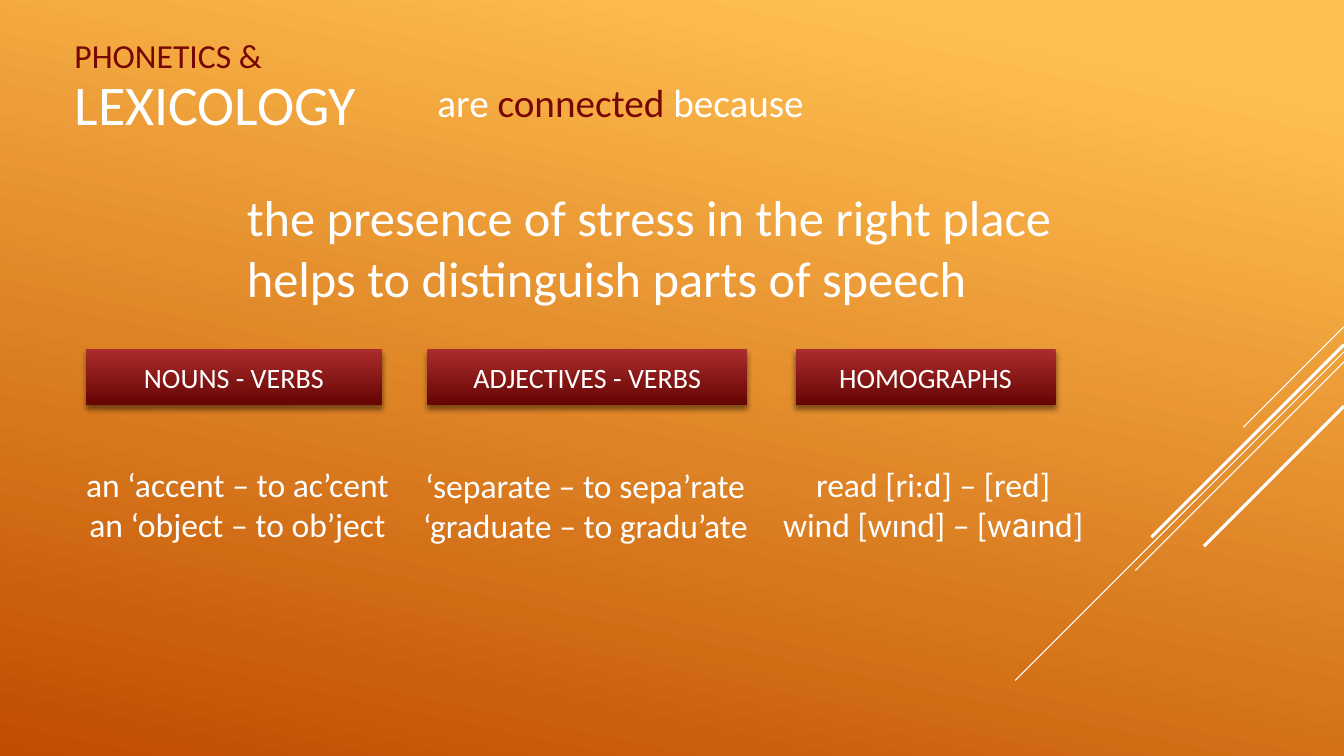
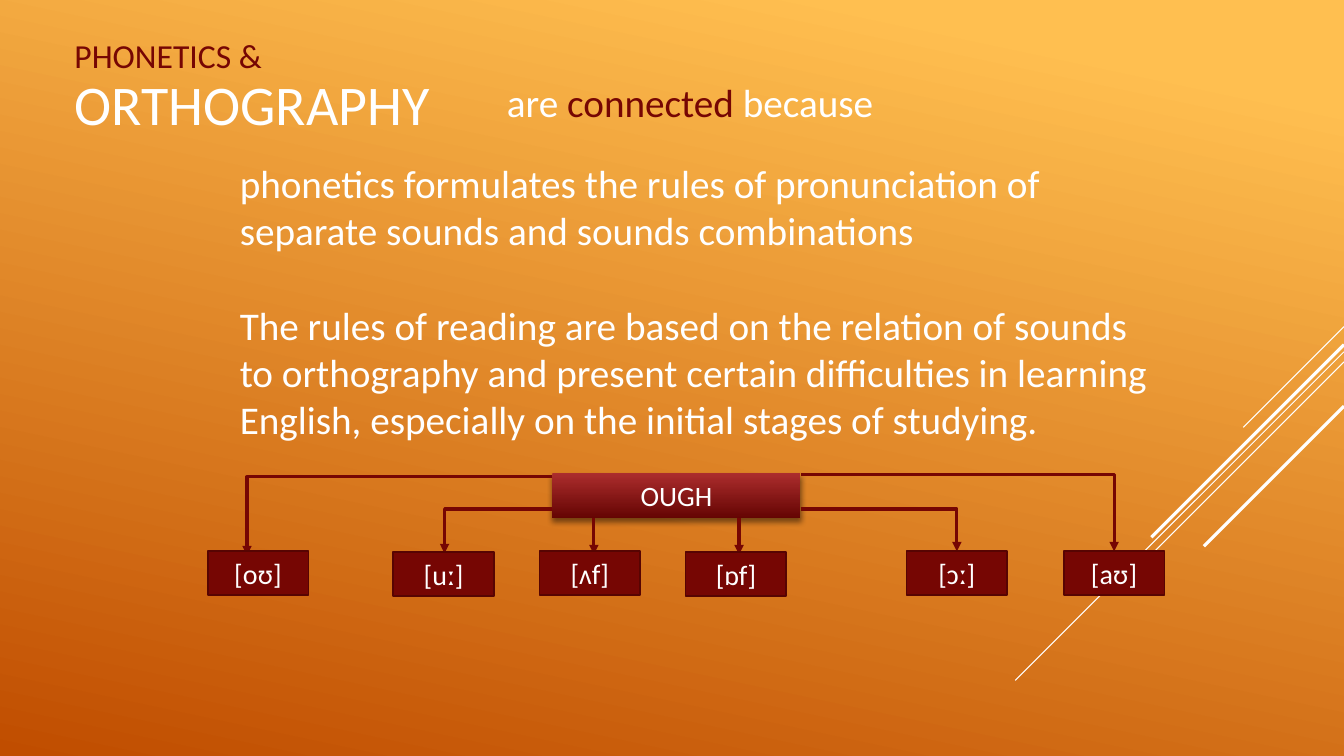
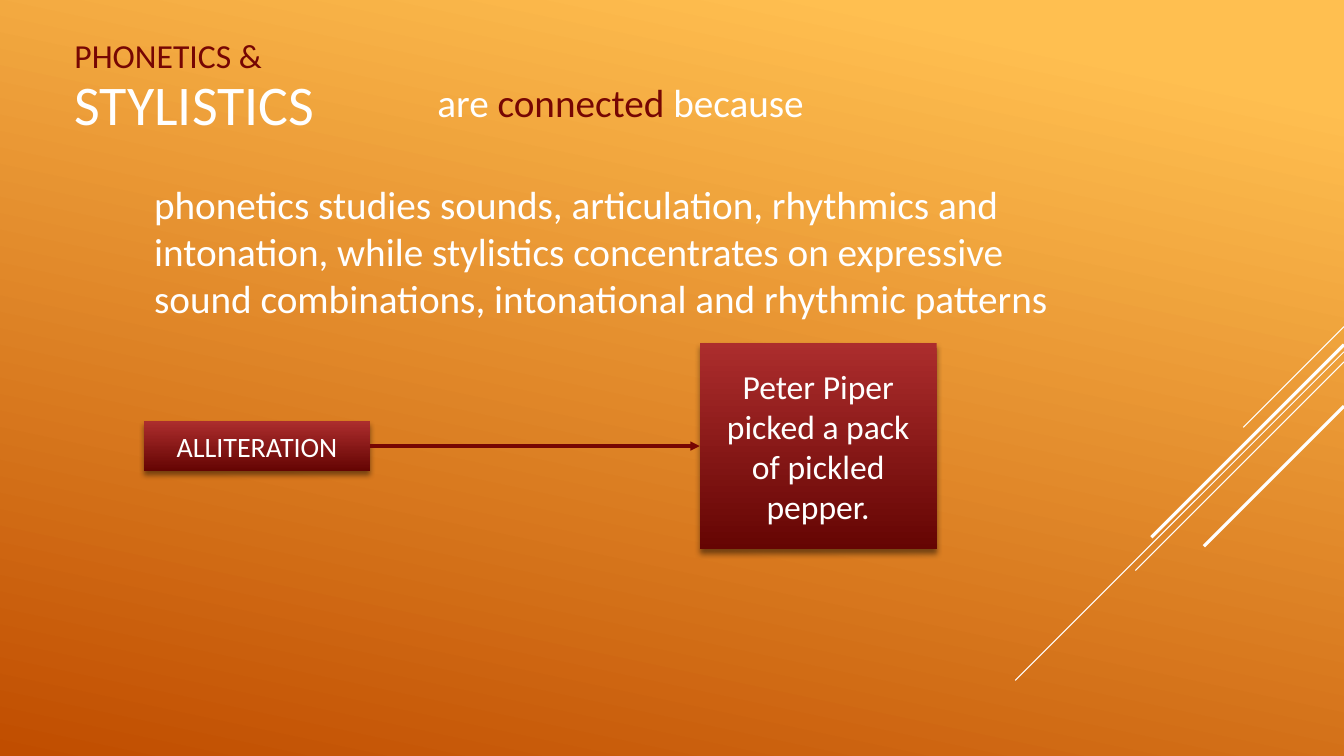
from pptx import Presentation
from pptx.dml.color import RGBColor
from pptx.enum import dml, shapes, text
from pptx.oxml import parse_xml
from pptx.oxml.ns import nsdecls, qn
from pptx.util import Inches, Pt

FONT = "Calibri"
WHITE = "FFFFFF"
MAROON = "760603"
DARK_MAROON = "570402"
BUTTON_GRADIENT = ((0, "AC2D2D"), (1, "650503"))
PAGE_GRADIENT = ((0.1, "FFBF50"), (1, "C04D00"))
LEFT, CENTER = text.PP_ALIGN.LEFT, text.PP_ALIGN.CENTER
TOP, MIDDLE = text.MSO_ANCHOR.TOP, text.MSO_ANCHOR.MIDDLE
LINE_HEIGHT = 1.22

# start x, start y, horizontal and vertical run, width in points
RAYS = (
    (13.33, 3.24, 1, 0.75),
    (13.33, 3.49, 3.26, 0.75),
    (13.33, 3.59, 2.07, 0.75),
    (13.33, 3.42, 1.91, 2.25),
    (13.33, 4.03, 1.39, 2.25),
)


def color(hex_code):
    return RGBColor.from_string(hex_code)


def fill_gradient(fill, stops, clockwise_angle):
    fill.gradient()
    fill.gradient_angle = 360 - clockwise_angle
    for stop, (position, hex_code) in zip(fill.gradient_stops, stops):
        stop.position = position
        stop.color.rgb = color(hex_code)


def write(shape, paragraphs, size, align=LEFT, anchor=TOP, gap=0):
    """Each paragraph is a string or a list of (text, colour, font) runs."""
    frame = shape.text_frame
    frame.word_wrap = True
    frame.auto_size = text.MSO_AUTO_SIZE.NONE
    frame.vertical_anchor = anchor
    for index, runs in enumerate(paragraphs):
        paragraph = frame.add_paragraph() if index else frame.paragraphs[0]
        paragraph.alignment = align
        if index and gap:
            paragraph.space_before = Pt(gap)
        if isinstance(runs, str):
            runs = [(runs, WHITE, FONT)]
        for words, hex_code, font in runs:
            run = paragraph.add_run()
            run.text = words
            run.font.size = Pt(size)
            run.font.name = font
            run.font.color.rgb = color(hex_code)


def add_text(slide, box, paragraphs, size, **style):
    shape = slide.shapes.add_textbox(*map(Inches, box))
    write(shape, paragraphs, size, **style)


def add_rectangle(slide, box, label, size):
    shape = slide.shapes.add_shape(shapes.MSO_SHAPE.RECTANGLE, *map(Inches, box))
    shape.shadow.inherit = False
    write(shape, [label], size, align=CENTER, anchor=MIDDLE)
    return shape


def add_button(slide, box, label, size=20):
    """Gradient rectangle with a soft shadow below it."""
    shape = add_rectangle(slide, box, label, size)
    fill_gradient(shape.fill, BUTTON_GRADIENT, 90)
    shape.line.fill.background()
    shape.element.spPr.find(qn("a:effectLst")).append(parse_xml(
        f'<a:outerShdw {nsdecls("a")} blurRad="{Pt(4)}" dist="{Pt(3)}" dir="5400000" '
        'rotWithShape="0"><a:srgbClr val="000000"><a:alpha val="46000"/></a:srgbClr>'
        '</a:outerShdw>'))
    return shape


def add_sound(slide, box, label):
    shape = add_rectangle(slide, box, label, 20)
    shape.fill.solid()
    shape.fill.fore_color.rgb = color(MAROON)
    shape.line.color.rgb = color(DARK_MAROON)
    shape.line.width = Pt(1.25)


def add_line(slide, start, end, hex_code, width, kind=shapes.MSO_CONNECTOR.STRAIGHT):
    connector = slide.shapes.add_connector(kind, *map(Inches, (*start, *end)))
    connector.line.color.rgb = color(hex_code)
    connector.line.width = Pt(width)
    connector.element.spPr.append(parse_xml(f'<a:effectLst {nsdecls("a")}/>'))
    return connector


def add_arrow(slide, start, end, bent=False):
    """A bent arrow runs sideways first, then down."""
    kind = shapes.MSO_CONNECTOR.ELBOW if bent else shapes.MSO_CONNECTOR.STRAIGHT
    connector = add_line(slide, start, end, MAROON, 2.25, kind)
    properties = connector.element.spPr
    properties.find(qn("a:ln")).append(
        parse_xml(f'<a:tailEnd {nsdecls("a")} type="triangle"/>'))
    if bent:
        properties.find(qn("a:prstGeom")).set("prst", "bentConnector2")
    return connector


def decorate_master(presentation, slide):
    """Set the background and move the rays, drawn on a slide, to the master."""
    master = presentation.slide_master
    fill_gradient(master.background.fill, PAGE_GRADIENT, 102)
    for number, (x, y, run, width) in enumerate(RAYS, start=20):
        ray = add_line(slide, (x, y), (x - run, y + run), WHITE, width)
        ray.element.nvCxnSpPr.cNvPr.id = number
        master.shapes.element.append(ray.element)


def add_topic_slide(presentation, topic, connected_left):
    slide = presentation.slides.add_slide(presentation.slide_layouts[5])
    title = slide.shapes.title
    title.left, title.top, title.width, title.height = map(Inches, (0.64, 0.68, 4.36, 0.69))
    write(title, [topic], 40, anchor=MIDDLE)
    add_text(slide, (0.64, 0.3, 5.14, 0.5), [[("PHONETICS &", MAROON, FONT)]], 24,
             anchor=MIDDLE)
    add_text(slide, (connected_left, 0.73, 3.97, 0.57),
             [[("are ", WHITE, FONT), ("connected ", MAROON, FONT),
               ("because", WHITE, FONT)]], 28)
    return slide


def build_lexicology(slide):
    add_text(slide, (2.35, 1.8, 8.31, 1.31),
             ["the presence of stress in the right place helps to distinguish "
              "parts of speech"], 36)
    for left, width, label in ((0.85, 2.94, "NOUNS - VERBS"),
                               (4.24, 3.17, "ADJECTIVES - VERBS"),
                               (7.89, 2.58, "HOMOGRAPHS")):
        add_button(slide, (left, 3.46, width, 0.56), label)
    wind = [("wind [wɪnd] – [w", WHITE, FONT), ("а", WHITE, "Roboto"),
            ("ɪnd]", WHITE, FONT)]
    for left, top, width, examples in (
            (0.72, 4.55, 3.27, ["an ‘accent – to ac’cent", "an ‘object – to ob’ject"]),
            (3.99, 4.56, 3.63, ["‘separate – to sepa’rate", "‘graduate – to gradu’ate"]),
            (7.62, 4.55, 3.27, ["read [ri:d] – [red]", wind])):
        add_text(slide, (left, top, width, 0.91), examples, 24, align=CENTER)


def build_orthography(slide):
    add_text(slide, (2.28, 1.53, 9.27, 2.93),
             ["phonetics formulates the rules of pronunciation of separate sounds "
              "and sounds combinations",
              "The rules of reading are based on the relation of sounds to orthography "
              "and present certain difficulties in learning English, especially on the "
              "initial stages of studying."], 28, gap=round(28 * LINE_HEIGHT))
    left, top, width, height = spelling = (5.48, 4.69, 2.46, 0.45)
    right, bottom = left + width, top + height
    add_button(slide, spelling, "OUGH")
    for start, end in (((right, 4.71), (11.05, 5.47)), ((left, 4.73), (2.45, 5.51)),
                       ((left, 5.05), (4.41, 5.49)), ((right, 5.05), (9.49, 5.47))):
        add_arrow(slide, start, end, bent=True)
    for x in (5.89, 7.33):
        add_arrow(slide, (x, bottom), (x, 5.5))
    for x, y, sound in ((2.06, 5.47, "[oʊ]"), (3.9, 5.48, "[uː]"), (5.35, 5.47, "[ʌf]"),
                        (6.8, 5.48, "[ɒf]"), (8.99, 5.47, "[ɔː]"), (10.55, 5.47, "[aʊ]")):
        add_sound(slide, (x, y, 1, 0.43), sound)


def build_stylistics(slide):
    add_text(slide, (1.43, 1.74, 9.49, 1.51),
             ["phonetics studies sounds, articulation, rhythmics and intonation, while "
              "stylistics concentrates on expressive sound combinations, intonational "
              "and rhythmic patterns"], 28)
    device = add_button(slide, (1.43, 4.18, 2.24, 0.49), "ALLITERATION")
    example = add_button(slide, (6.94, 3.4, 2.35, 2.05),
                         "Peter Piper picked a pack of pickled pepper.", 24)
    arrow = add_arrow(slide, (3.67, 4.42), (6.94, 4.43))
    arrow.begin_connect(device, 3)
    arrow.end_connect(example, 1)


def main():
    presentation = Presentation()
    presentation.slide_width, presentation.slide_height = Inches(13.33), Inches(7.5)
    lexicology = add_topic_slide(presentation, "LEXICOLOGY", 4.24)
    decorate_master(presentation, lexicology)
    build_lexicology(lexicology)
    build_orthography(add_topic_slide(presentation, "ORTHOGRAPHY", 4.93))
    build_stylistics(add_topic_slide(presentation, "STYLISTICS", 4.24))
    presentation.save("out.pptx")


if __name__ == "__main__":
    main()
